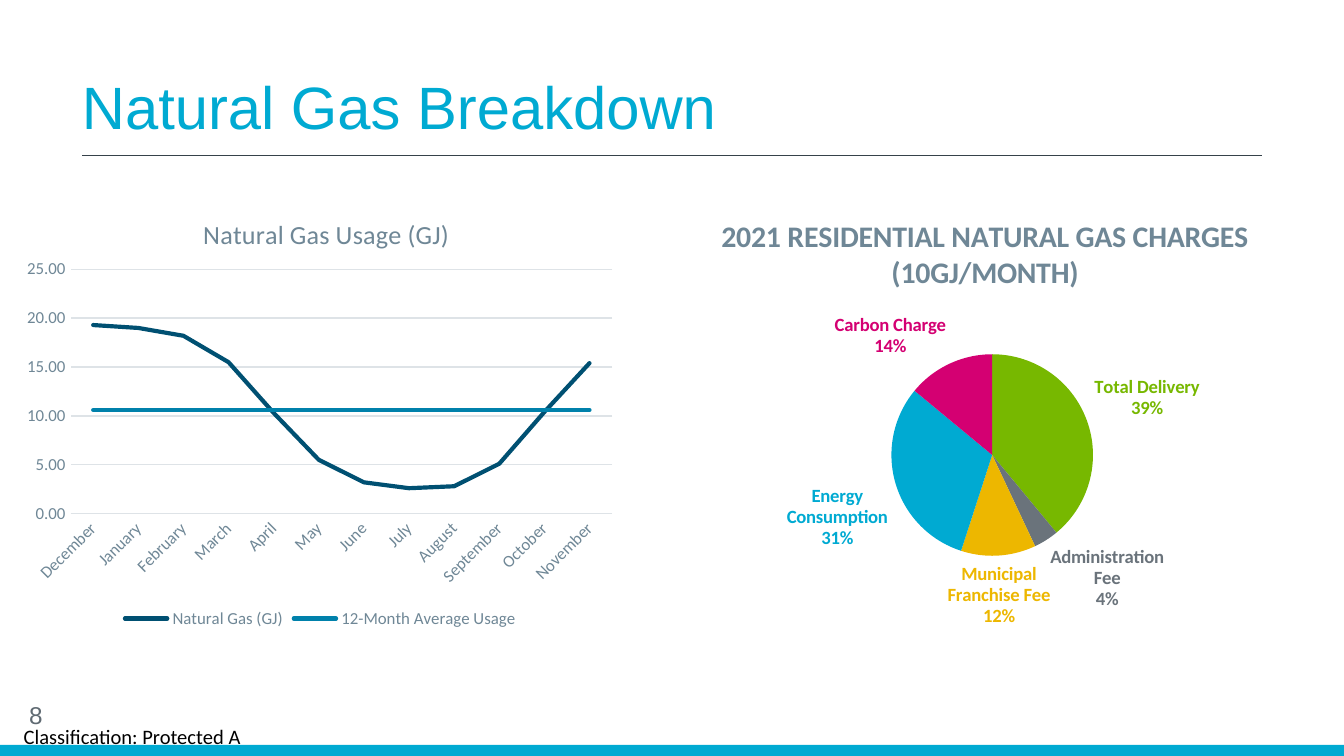
from lxml import etree
from pptx import Presentation
from pptx.chart.data import CategoryChartData as Data
from pptx.dml.color import RGBColor
from pptx.enum.chart import XL_CHART_TYPE as Kind, XL_LABEL_POSITION as Spot
from pptx.enum.chart import XL_LEGEND_POSITION as Side, XL_TICK_MARK as Tick
from pptx.enum.shapes import MSO_CONNECTOR as Link, MSO_SHAPE as Form
from pptx.enum.text import MSO_ANCHOR as Anchor, PP_ALIGN as Align
from pptx.oxml.ns import qn
from pptx.util import Cm, Pt

CYAN, SLATE, PALE, DARK = "00AAD2", "6F8796", "DEE3E7", "36424A"
MONTHS = ["December", "January", "February", "March", "April", "May", "June",
          "July", "August", "September", "October", "November"]
USAGE = [19.3, 19, 18.2, 15.5, 10.3, 5.5, 3.2, 2.6, 2.8, 5.1, 10.4, 15.4]
LINES = [("Natural Gas (GJ)", USAGE, "005072"),
         ("12-Month Average Usage", [10.6] * len(MONTHS), "0081AB")]
CHARGES = [("Total Delivery", 39, "77B800"),
           ("Administration Fee", 4, "6A737B"),
           ("Municipal Franchise Fee", 12, "EDB700"),
           ("Energy Consumption", 31, CYAN),
           ("Carbon Charge", 14, "D40072")]


def rgb(code):
    return RGBColor.from_string(code)


def style(font, size, color, face="Calibri", bold=False):
    font.size, font.name, font.bold = Pt(size), face, bold
    font.color.rgb = rgb(color)


def add(node, tag, val, at=None):
    item = etree.Element(qn(tag), val=str(val))
    node.insert(len(node) if at is None else at, item)


def pin(node, at, x, y, w=None, h=None):
    """Place a chart part by fractions of the chart area."""
    for old in node.findall(qn("c:layout")):
        node.remove(old)
    outer = etree.Element(qn("c:layout"))
    node.insert(at, outer)
    box = etree.SubElement(outer, qn("c:manualLayout"))
    if node.tag == qn("c:plotArea"):
        add(box, "c:layoutTarget", "inner")
    add(box, "c:xMode", "edge")
    add(box, "c:yMode", "edge")
    for tag, val in zip("xywh", (x, y, w, h)):
        if val is not None:
            add(box, "c:" + tag, val)


class Page:
    def __init__(self, deck):
        self.slide = deck.slides.add_slide(deck.slide_layouts[6])
        self.shapes = self.slide.shapes

    def bar(self, x, y, w, h, color):
        bar = self.shapes.add_shape(Form.RECTANGLE, Cm(x), Cm(y), Cm(w), Cm(h))
        bar.shadow.inherit = False
        bar.fill.solid()
        bar.fill.fore_color.rgb = rgb(color)
        bar.line.fill.background()

    def rule(self, x, y, end, color):
        rule = self.shapes.add_connector(Link.STRAIGHT, Cm(x), Cm(y), Cm(end), Cm(y))
        rule.line.color.rgb = rgb(color)
        rule.line.width = Pt(0.75)
        etree.SubElement(rule._element.spPr, qn("a:effectLst"))

    def text(self, words, x, y, w, h, size, color, face="Arial",
             anchor=Anchor.MIDDLE, align=Align.LEFT, flush=False):
        frame = self.shapes.add_textbox(Cm(x), Cm(y), Cm(w), Cm(h)).text_frame
        frame.word_wrap, frame.vertical_anchor = True, anchor
        if flush:
            frame.margin_left = frame.margin_right = 0
            frame.margin_top = frame.margin_bottom = 0
        para = frame.paragraphs[0]
        para.alignment = align
        run = para.add_run()
        run.text = words
        style(run.font, size, color, face)

    def chart(self, kind, data, box, title, size, bold, spot, plot):
        chart = self.shapes.add_chart(kind, *map(Cm, box), data).chart
        style(chart.font, 10, DARK)
        chart.has_legend = False
        frame = chart.chart_title.text_frame
        for i, words in enumerate(title):
            para = frame.add_paragraph() if i else frame.paragraphs[0]
            run = para.add_run()
            run.text = words
            style(run.font, size, SLATE, bold=bold)
        chart.chart_title.include_in_layout = False
        pin(chart._chartSpace.chart.find(qn("c:title")), 1, *spot)
        pin(chart._chartSpace.chart.plotArea, 0, *plot)
        return chart

    def trend(self, box):
        data = Data(number_format="0.00")
        data.categories = MONTHS
        for name, vals, _ in LINES:
            data.add_series(name, vals)
        chart = self.chart(Kind.LINE, data, box, ["Natural Gas Usage (GJ)"], 14, False,
                           (0.3, 0.05), (0.09, 0.18, 0.89, 0.55))
        for row, (_, _, color) in zip(chart.plots[0].series, LINES):
            row.smooth = False
            row.format.line.color.rgb = rgb(color)
            row.format.line.width = Pt(2.25)
            for edge in row._element.iter(qn("a:ln")):
                edge.set("cap", "rnd")
        # Axes
        months, scale = chart.category_axis, chart.value_axis
        for axis in (months, scale):
            axis.major_tick_mark = axis.minor_tick_mark = Tick.NONE
            style(axis.tick_labels.font, 9, SLATE)
        scale.minimum_scale, scale.maximum_scale, scale.major_unit = 0, 25, 5
        scale.tick_labels.number_format = "0.00"
        scale.tick_labels.number_format_is_linked = False
        scale.format.line.fill.background()
        for part in (months, scale.major_gridlines):
            part.format.line.color.rgb = rgb(PALE)
            part.format.line.width = Pt(0.75)
        turn = months._element.find(qn("c:txPr")).find(qn("a:bodyPr"))
        turn.set("rot", "-2700000")
        turn.set("vert", "horz")
        # Legend
        chart.has_legend = True
        chart.legend.position = Side.BOTTOM
        chart.legend.include_in_layout = False
        style(chart.legend.font, 9, SLATE)

    def pie(self, box):
        data = Data(number_format="0")
        data.categories = [name for name, _, _ in CHARGES]
        data.add_series("Series 1", [val for _, val, _ in CHARGES])
        title = ["2021 RESIDENTIAL NATURAL GAS CHARGES", "(10GJ/MONTH)"]
        chart = self.chart(Kind.PIE, data, box, title, 16, True,
                           (0.13, 0.05), (0.37, 0.36, 0.29, 0.44))
        plot = chart.plots[0]
        plot.vary_by_categories = True
        for i, (_, _, color) in enumerate(CHARGES):
            point = plot.series[0].points[i]
            point.format.fill.solid()
            point.format.fill.fore_color.rgb = rgb(color)
            style(point.data_label.font, 10, color, bold=True)
            point.data_label.position = Spot.OUTSIDE_END
        # Category and percent on two lines
        marks = plot.series[0].data_labels
        marks.show_value = False
        marks.show_category_name = marks.show_percentage = True
        marks.number_format, marks.number_format_is_linked = "0%", False
        marks.position = Spot.OUTSIDE_END
        for label in plot.series[0]._element.iter(qn("c:dLbl")):
            for tag, val in (("Val", 0), ("CatName", 1), ("Percent", 1)):
                label.find(qn("c:show" + tag)).set("val", str(val))
            etree.SubElement(label, qn("c:separator")).text = "\n"


def main():
    deck = Presentation()
    deck.slide_width, deck.slide_height = Cm(25.4), Cm(14.29)
    page = Page(deck)
    # Footer
    page.bar(0, 14.08, 25.4, 0.21, CYAN)
    page.text("Classification: Protected A", 0, 13.52, 5, 0.78, 11, "000000",
              "Calibri", align=Align.CENTER, flush=True)
    page.text("8", 0.3, 13.14, 5.7, 0.76, 13, "5F6A72")
    # Heading
    page.rule(1.55, 2.94, 23.85, DARK)
    page.text("Natural Gas Breakdown", 1.3, 1.22, 22.83, 1.58, 32, CYAN,
              anchor=Anchor.BOTTOM)
    # Charts
    page.pie((11.8, 3.58, 13.5, 8.66))
    page.trend((0.3, 3.58, 11.5, 8.4))
    deck.save("out.pptx")


if __name__ == "__main__":
    main()
